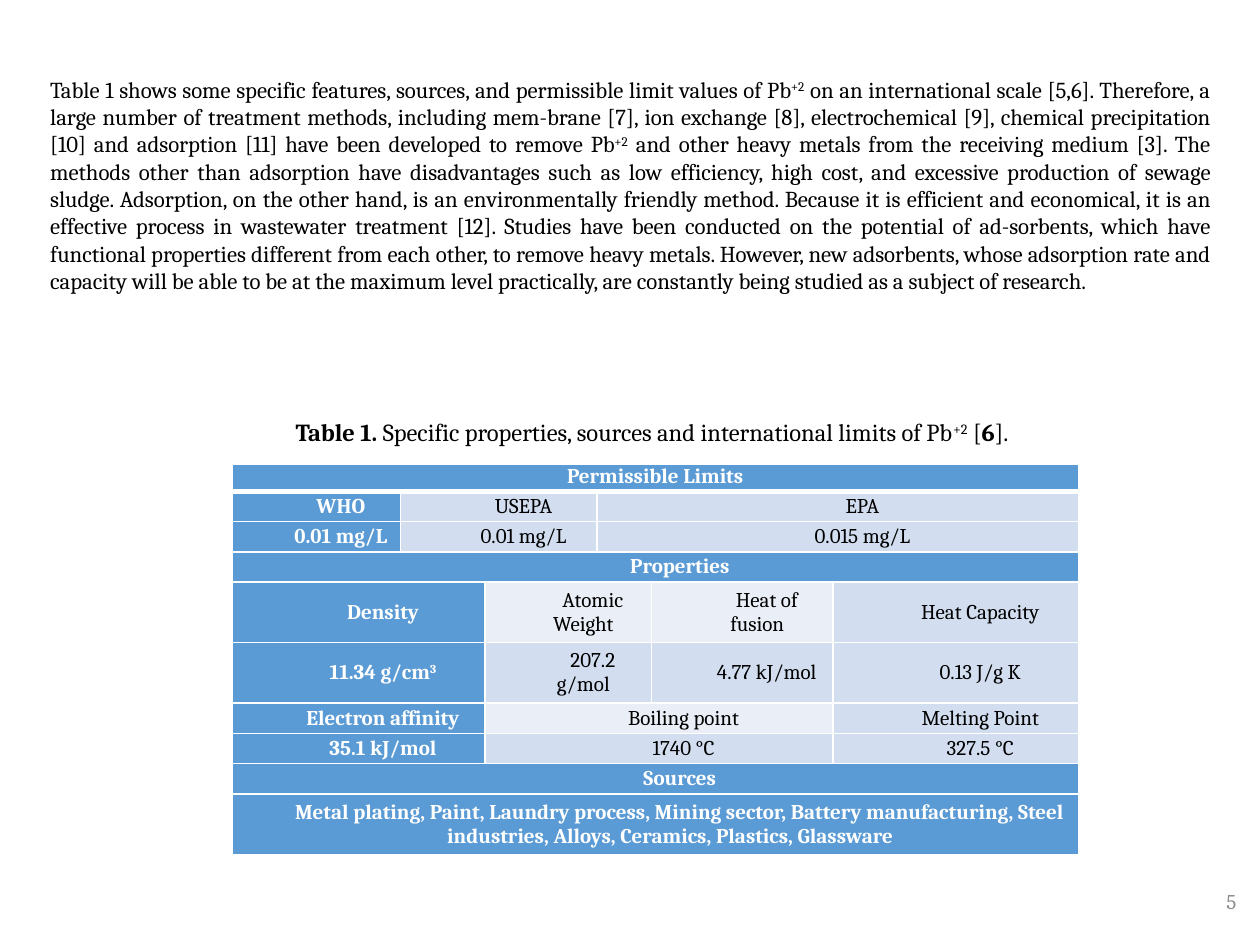
from lxml import etree
from pptx import Presentation
from pptx import util as u
from pptx.dml.color import RGBColor
from pptx.enum import text
from pptx.oxml.ns import qn

Pt = u.Pt
FONT = "Cambria"
BLACK, WHITE, GREY = "000000", "FFFFFF", "8C8C8C"
BLUE, LIGHT, PALE = "5B9BD5", "D2DEEF", "EAEFF7"
ALIGN, ANCHOR = text.PP_ALIGN, text.MSO_ANCHOR

# Content: each text is a list of (words, style); "b" is bold, "^" is superscript
INTRO = [
    ("Table 1 shows some specific features, sources, and permissible limit values of Pb", ""),
    ("+2", "^"),
    (" on an international scale [5,6]. Therefore, a large number of treatment methods, "
     "including mem-brane [7], ion exchange [8], electrochemical [9], chemical precipitation "
     "[10] and adsorption [11] have been developed to remove Pb", ""),
    ("+2", "^"),
    (" and other heavy metals from the receiving medium [3]. The methods other than adsorption "
     "have disadvantages such as low efficiency, high cost, and excessive production of sewage "
     "sludge. Adsorption, on the other hand, is an environmentally friendly method. Because it "
     "is efficient and economical, it is an effective process in wastewater treatment [12]. "
     "Studies have been conducted on the potential of ad-sorbents, which have functional "
     "properties different from each other, to remove heavy metals. However, new adsorbents, "
     "whose adsorption rate and capacity will be able to be at the maximum level practically, "
     "are constantly being studied as a subject of research.", ""),
]
CAPTION = [
    ("Table 1.", "b"), (" Specific properties, sources and international limits of Pb", ""),
    ("+2", "^"), (" [", ""), ("6", "b"), ("].", ""),
]
PAGE_NUMBER = [("5", "")]

# Table rows: (height, column spans, cells); a cell is (words, fill, superscript)
COLUMNS = [96.5, 48.2, 64.1, 31, 103.7, 140.4]
LINE, DOUBLE = 17.3, 34.6
LIMITS, PROPERTIES, POINTS, FULL = (1, 2, 3), (2, 2, 1, 1), (2, 3, 1), (6,)
ROWS = [
    (15.8, FULL, [("Permissible Limits", BLUE)]),
    (LINE, LIMITS, [("WHO", BLUE), ("USEPA", LIGHT), ("EPA", LIGHT)]),
    (LINE, LIMITS, [("0.01 mg/L", BLUE), ("0.01 mg/L", LIGHT), ("0.015 mg/L", LIGHT)]),
    (LINE, FULL, [("Properties", BLUE)]),
    (DOUBLE, PROPERTIES, [("Density", BLUE), ("Atomic Weight", PALE),
                          ("Heat of fusion", PALE), ("Heat Capacity", LIGHT)]),
    (DOUBLE, PROPERTIES, [("11.34 g/cm", BLUE, "3"), ("207.2 g/mol", LIGHT),
                          ("4.77 kJ/mol", LIGHT), ("0.13 J/g K", LIGHT)]),
    (LINE, POINTS, [("Electron affinity", BLUE), ("Boiling point", PALE),
                    ("Melting Point", LIGHT)]),
    (LINE, POINTS, [("35.1 kJ/mol", BLUE), ("1740 °C", LIGHT), ("327.5 °C", LIGHT)]),
    (LINE, FULL, [("Sources", BLUE)]),
    (DOUBLE, FULL, [("Metal plating, Paint, Laundry process, Mining sector, Battery "
                     "manufacturing, Steel industries, Alloys, Ceramics, Plastics, "
                     "Glassware", BLUE)]),
]


def color(value):
    return RGBColor.from_string(value)


def write(para, parts, size, ink, align, margin=0, indent=0):
    para.alignment = align
    para.font.name, para.font.size = FONT, Pt(size)
    if margin or indent:
        props = para._p.get_or_add_pPr()
        props.set("marL", str(Pt(margin)))
        props.set("indent", str(Pt(indent)))
    for words, style in parts:
        span = para.add_run()
        span.text = words
        span.font.bold = "b" in style
        span.font.color.rgb = color(ink)
        if "^" in style:
            span._r.get_or_add_rPr().set("baseline", "30000")


def add_text(page, place, parts, size, ink, align, anchor, wrap=True, indent=0):
    box = page.shapes.add_textbox(*map(Pt, place))
    box.text_frame.word_wrap = wrap
    box.text_frame.vertical_anchor = anchor
    write(box.text_frame.paragraphs[0], parts, size, ink, align, indent=indent)


def set_borders(cell, top, bottom):
    props = cell._tc.get_or_add_tcPr()
    for side, width in (("L", 1), ("R", 1), ("T", top), ("B", bottom)):
        line = etree.SubElement(props, qn(f"a:ln{side}"), w=str(Pt(width)))
        fill = etree.SubElement(line, qn("a:solidFill"))
        etree.SubElement(fill, qn("a:srgbClr"), val=WHITE)


def add_limits_table(page, left, top):
    height = sum(row[0] for row in ROWS)
    frame = page.shapes.add_table(len(ROWS), len(COLUMNS), Pt(left), Pt(top),
                                  Pt(sum(COLUMNS)), Pt(height))
    table = frame.table
    table.first_row = table.horz_banding = False
    for column, width in zip(table.columns, COLUMNS):
        column.width = Pt(width)

    for r, (height, spans, cells) in enumerate(ROWS):
        table.rows[r].height = Pt(height)
        start = 0
        for count, (words, fill, *raised) in zip(spans, cells):
            # Every grid cell under a span carries the same fill and borders
            for c in range(start, start + count):
                part = table.cell(r, c)
                set_borders(part, 3 if r == 1 else 1, 3 if r == 0 else 1)
                part.fill.solid()
                part.fill.fore_color.rgb = color(fill)
            cell = table.cell(r, start)
            if count > 1:
                cell.merge(table.cell(r, start + count - 1))
            start += count

            cell.vertical_anchor = ANCHOR.MIDDLE
            cell.margin_left = cell.margin_right = Pt(5)
            cell.margin_top = cell.margin_bottom = 0
            bold, ink = ("b", WHITE) if fill == BLUE else ("", BLACK)
            parts = [(words, bold)] + [(mark, bold + "^") for mark in raised]
            margin, indent = (17.3, 10.8) if r else (0, 0)
            para = cell.text_frame.paragraphs[0]
            write(para, parts, 12, ink, ALIGN.CENTER, margin, indent)
            if r == 0:
                para.line_spacing = Pt(13)


def main():
    deck = Presentation()
    deck.slide_width, deck.slide_height = Pt(720), Pt(540)
    page = deck.slides.add_slide(deck.slide_layouts[6])

    add_text(page, (21.6, 39.6, 676.8, 149), INTRO, 13, BLACK, ALIGN.JUSTIFY, ANCHOR.TOP)
    add_text(page, (545.8, 500.4, 167.8, 28.8), PAGE_NUMBER, 12, GREY,
             ALIGN.RIGHT, ANCHOR.MIDDLE)
    add_limits_table(page, 132.5, 265)
    add_text(page, (132.5, 234.7, 469.4, 24.5), CAPTION, 14, BLACK, ALIGN.CENTER,
             ANCHOR.MIDDLE, wrap=False, indent=10.8)

    deck.save("out.pptx")


if __name__ == "__main__":
    main()
